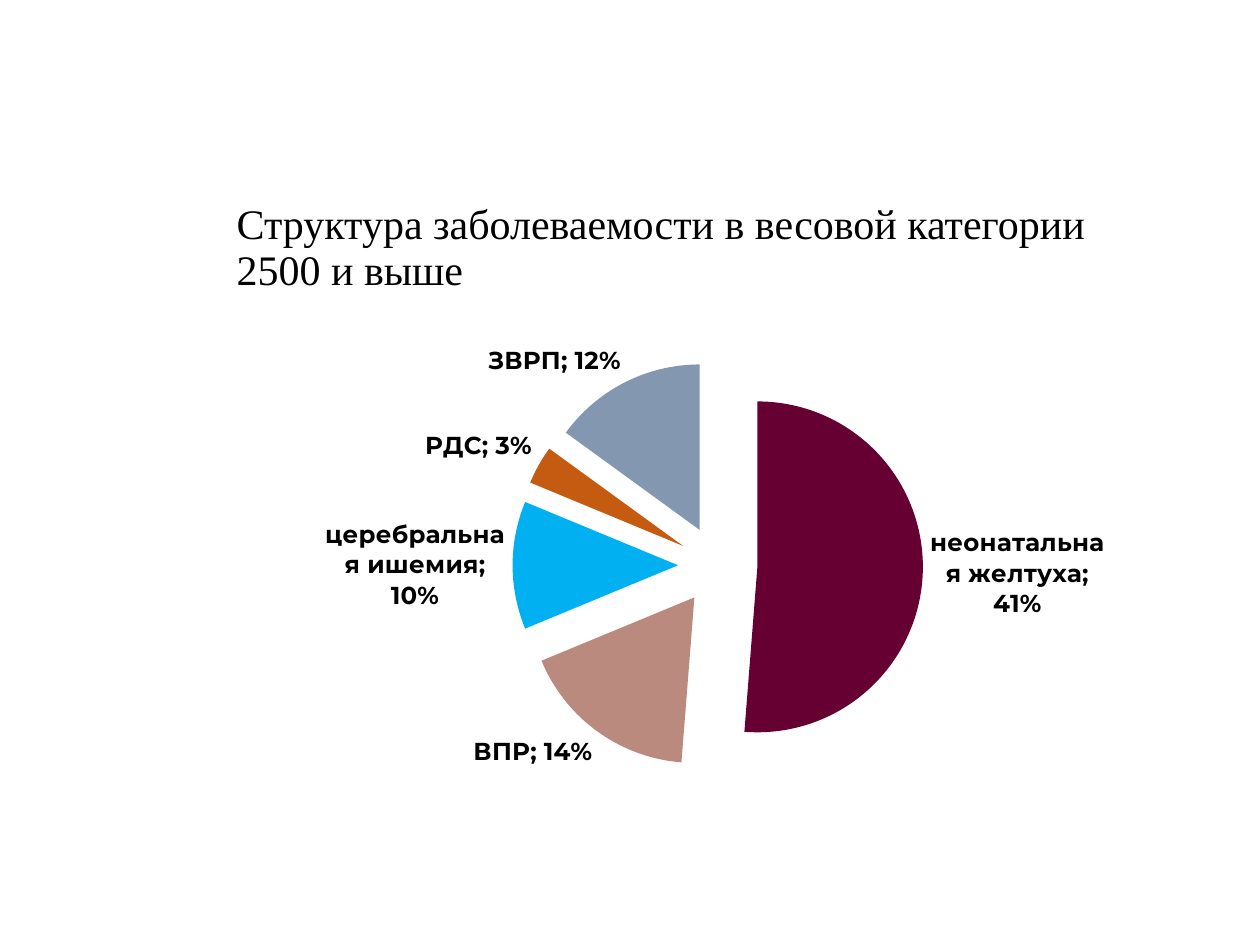
from lxml.etree import SubElement
from pptx import Presentation
from pptx.chart.data import CategoryChartData
from pptx.dml.color import RGBColor
from pptx.enum.chart import XL_CHART_TYPE, XL_LABEL_POSITION
from pptx.enum.text import MSO_ANCHOR, MSO_AUTO_SIZE, PP_ALIGN
from pptx.oxml.ns import qn
from pptx.util import Emu, Pt

PX = 914400 / 126
DIAGNOSES = [
    ("неонатальная желтуха", 0.41, "660033"),
    ("ВПР", 0.14, "BA8A7F"),
    ("церебральная ишемия", 0.10, "00B0F0"),
    ("РДС", 0.03, "C55A11"),
    ("ЗВРП", 0.12, "8497B0"),
]
PLOT_AREA = {"x": 0.3, "y": 0.09, "w": 0.45, "h": 0.84}


def px(length):
    return Emu(round(length * PX))


def color(hex_string):
    return RGBColor.from_string(hex_string)


def format_font(font, name, size, bold=False, hex_string="000000"):
    font.name = name
    font.size = Pt(size)
    font.bold = bold
    font.color.rgb = color(hex_string)


def write_text(frame, text, *, font, size, align=PP_ALIGN.LEFT, spacing=1.0):
    frame.word_wrap = True
    frame.auto_size = MSO_AUTO_SIZE.NONE
    frame.vertical_anchor = MSO_ANCHOR.MIDDLE
    paragraph = frame.paragraphs[0]
    paragraph.alignment = align
    paragraph.line_spacing = spacing
    run = paragraph.add_run()
    run.text = text
    format_font(run.font, font, size)


def add_title(slide, text, left, top, width, height):
    title = slide.shapes.title
    title.left, title.top = px(left), px(top)
    title.width, title.height = px(width), px(height)
    write_text(title.text_frame, text, font="Times New Roman", size=24, spacing=0.9)


def place_plot(chart):
    """Fix the inner plot area as fractions of the chart."""
    plot_area = chart.plots[0]._element.getparent()
    layout = plot_area.find(qn("c:layout"))
    if layout is None:
        layout = SubElement(plot_area, qn("c:layout"))
        plot_area.insert(0, layout)
    manual = SubElement(layout, qn("c:manualLayout"))
    settings = {"layoutTarget": "inner", "xMode": "edge", "yMode": "edge", **PLOT_AREA}
    for tag, value in settings.items():
        SubElement(manual, qn(f"c:{tag}")).set("val", str(value))


def explode(series, percent):
    """Pull all slices outwards by a percentage of the radius."""
    fill_and_line = series.format._element.get_or_add_spPr()
    explosion = SubElement(series._element, qn("c:explosion"))
    explosion.set("val", str(percent))
    fill_and_line.addnext(explosion)


def label_slices(series):
    labels = series.data_labels
    labels.show_category_name = True
    labels.show_value = True
    labels.number_format = "0%"
    labels.number_format_is_linked = False
    labels.position = XL_LABEL_POSITION.OUTSIDE_END
    format_font(labels.font, "Montserrat", 14, bold=True)
    separator = SubElement(labels._element, qn("c:separator"))
    separator.text = "; "
    labels._element.find(qn("c:showBubbleSize")).addnext(separator)


def add_pie(slide, diagnoses, left, top, width, height):
    names, shares, fills = zip(*diagnoses)
    chart_data = CategoryChartData(number_format="0%")
    chart_data.categories = names
    chart_data.add_series("Series 1", shares)
    chart = slide.shapes.add_chart(
        XL_CHART_TYPE.PIE, px(left), px(top), px(width), px(height), chart_data
    ).chart
    chart.has_title = False
    chart.has_legend = False
    format_font(chart.font, "Calibri", 10)
    place_plot(chart)

    chart.plots[0].vary_by_categories = True
    series = chart.plots[0].series[0]
    explode(series, 24)
    for index, fill in enumerate(fills):
        slice_format = series.points[index].format
        slice_format.fill.solid()
        slice_format.fill.fore_color.rgb = color(fill)
        slice_format.line.fill.background()
    label_slices(series)


def main():
    presentation = Presentation()
    presentation.slide_width, presentation.slide_height = px(1260), px(945)
    slide = presentation.slides.add_slide(presentation.slide_layouts[5])
    add_title(
        slide, "Структура заболеваемости в весовой категории 2500 и выше",
        224, 183, 953, 132,
    )
    add_pie(slide, DIAGNOSES, 239, 315, 912, 491)
    presentation.save("out.pptx")


if __name__ == "__main__":
    main()
